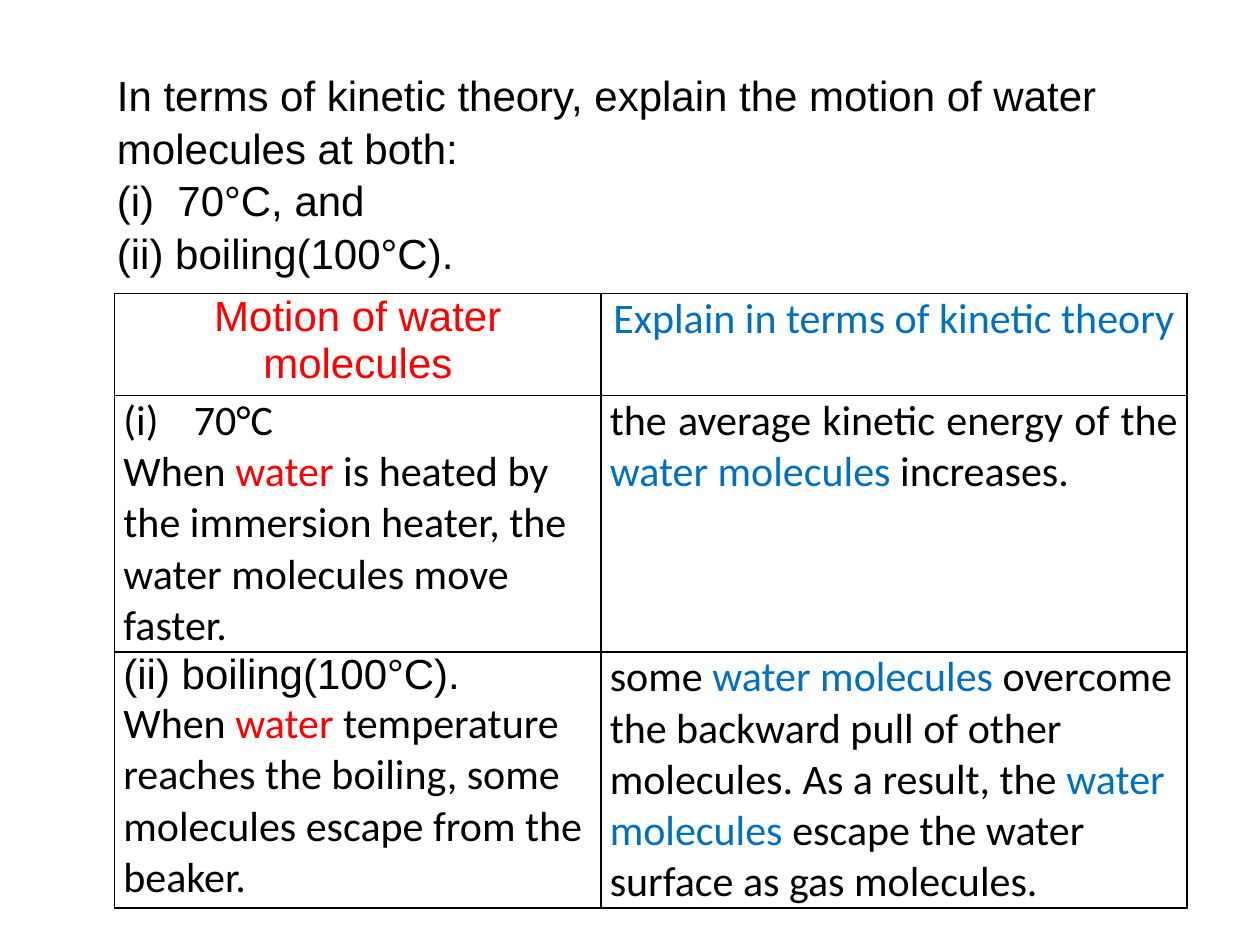
from lxml.etree import SubElement
from pptx import Presentation
from pptx.dml.color import RGBColor
from pptx.enum.text import PP_ALIGN
from pptx.oxml.ns import qn
from pptx.util import Inches, Pt

# Theme
THEME = {
    "ink": "000000", "red": "FF0000", "blue": "0070C0",
    "size": 24, "head": "Arial", "body": "Calibri", "line": 1,
}

# Content: a run is (text, colour); a paragraph is (runs, font, align, number)
LEFT, MID, JUST = PP_ALIGN.LEFT, PP_ALIGN.CENTER, PP_ALIGN.JUSTIFY
TASK = [
    "In terms of kinetic theory, explain the motion of water molecules at both:",
    "(i)\t70°C, and",
    "(ii) boiling(100°C).",
]
ROWS = [
    [
        [([("Motion of water molecules", "red")], "head", MID, False)],
        [([("Explain in terms of kinetic theory", "blue")], "body", MID, False)],
    ],
    [
        [
            ([("70°C", "ink")], "body", LEFT, True),
            ([("When ", "ink"), ("water", "red"),
              (" is heated by the immersion heater, the water molecules "
               "move faster.", "ink")], "body", LEFT, False),
        ],
        [([("the average kinetic energy of the ", "ink"),
           ("water molecules ", "blue"), ("increases.", "ink")],
          "body", JUST, False)],
    ],
    [
        [
            ([("(ii) boiling(100°C).", "ink")], "head", LEFT, False),
            ([("When ", "ink"), ("water", "red"),
              (" temperature reaches the boiling, some molecules escape "
               "from the beaker.", "ink")], "body", LEFT, False),
        ],
        [([("some ", "ink"), ("water molecules ", "blue"),
           ("overcome the backward pull of other molecules. "
            "As a result, the ", "ink"),
           ("water molecules ", "blue"),
           ("escape the water surface as gas molecules.", "ink")],
          "body", LEFT, False)],
    ],
]
WIDTHS = [3.86, 4.65]
HEIGHTS = [0.81, 2.03, 2.03]


def add_run(para, text, hue, font):
    run = para.add_run()
    run.text = text
    run.font.size = Pt(THEME["size"])
    run.font.name = THEME[font]
    run.font.color.rgb = RGBColor.from_string(THEME[hue])


def hang(para, depth):
    props = para._p.get_or_add_pPr()
    props.set("marL", str(Inches(depth)))
    props.set("indent", str(-Inches(depth)))
    return props


def fill_text(frame, paras):
    for i, (runs, font, align, number) in enumerate(paras):
        para = frame.paragraphs[0] if i == 0 else frame.add_paragraph()
        para.alignment = align
        for text, hue in runs:
            add_run(para, text, hue, font)
        if number:
            SubElement(hang(para, 0.56), qn("a:buAutoNum"),
                       type="romanLcParenBoth")


def add_edges(cell):
    props = cell._tc.get_or_add_tcPr()
    for i, side in enumerate(("lnL", "lnR", "lnT", "lnB")):
        edge = SubElement(props, qn("a:" + side), w=str(Pt(THEME["line"])))
        fill = SubElement(edge, qn("a:solidFill"))
        SubElement(fill, qn("a:srgbClr"), val=THEME["ink"])
        props.insert(i, edge)


def main():
    deck = Presentation()
    deck.slide_width, deck.slide_height = Inches(10), Inches(7.5)
    slide = deck.slides.add_slide(deck.slide_layouts[6])

    # Table
    shape = slide.shapes.add_table(
        len(ROWS), len(WIDTHS), Inches(0.91), Inches(2.33),
        Inches(sum(WIDTHS)), Inches(sum(HEIGHTS)))
    table = shape.table
    for col, width in zip(table.columns, WIDTHS):
        col.width = Inches(width)
    for r, (row, height) in enumerate(zip(ROWS, HEIGHTS)):
        table.rows[r].height = Inches(height)
        for c, paras in enumerate(row):
            cell = table.cell(r, c)
            cell.margin_left = cell.margin_right = Inches(0.07)
            cell.margin_top = cell.margin_bottom = 0
            cell.fill.background()
            add_edges(cell)
            fill_text(cell.text_frame, paras)

    # Question above the table
    box = slide.shapes.add_textbox(
        Inches(0.83), Inches(0.49), Inches(8.98), Inches(1.68))
    frame = box.text_frame
    frame.word_wrap = True
    fill_text(frame, [([(text, "ink")], "head", LEFT, False) for text in TASK])
    for para in frame.paragraphs:
        para.line_spacing = 1.04
    for para in frame.paragraphs[1:]:
        hang(para, 0.48)

    deck.save("out.pptx")


if __name__ == "__main__":
    main()
